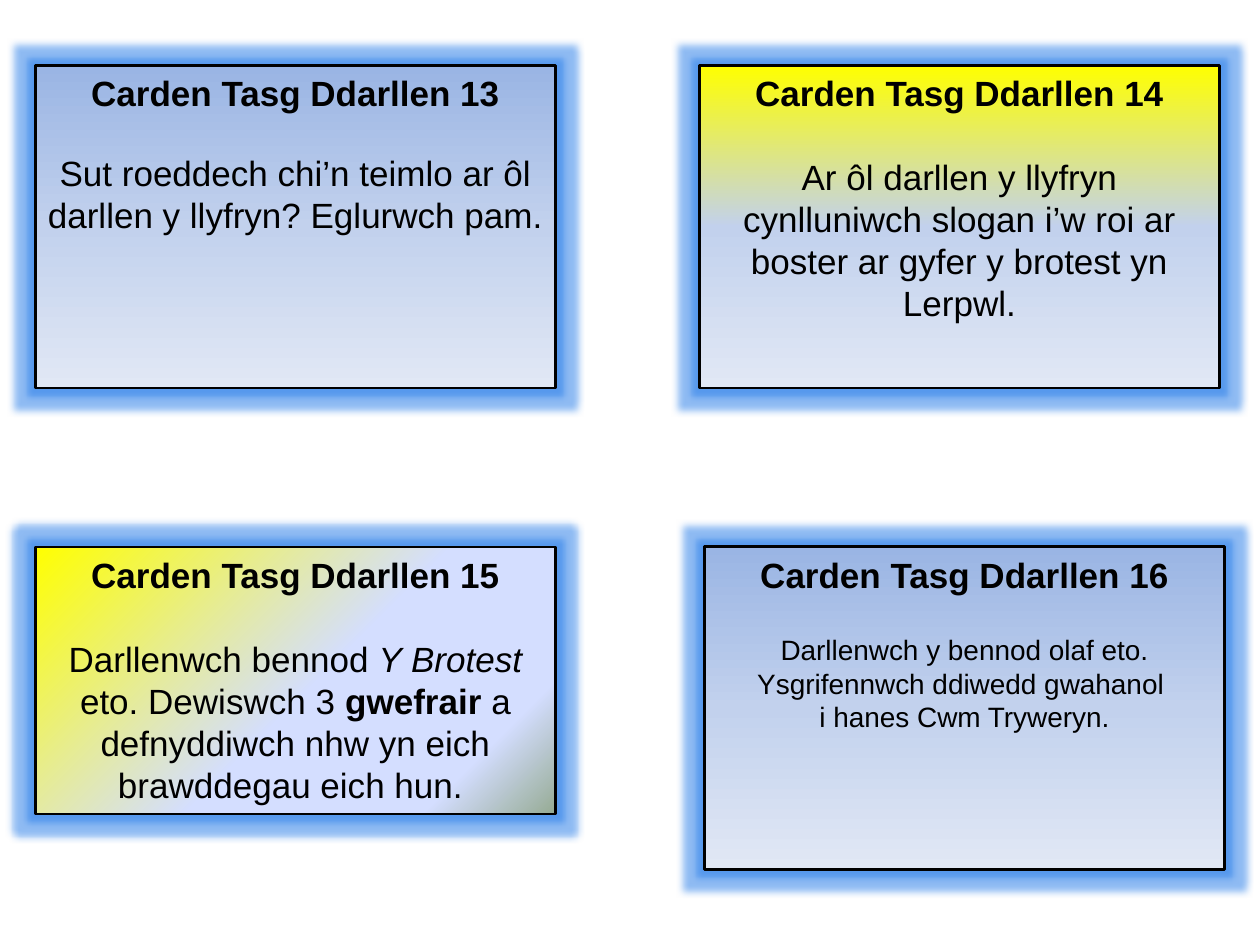
from lxml import etree
from pptx import Presentation
from pptx.dml.color import RGBColor
from pptx.enum.shapes import MSO_SHAPE
from pptx.enum.text import MSO_ANCHOR, MSO_AUTO_SIZE, PP_ALIGN
from pptx.oxml import parse_xml
from pptx.oxml.ns import nsdecls, qn
from pptx.util import Pt

BLACK = RGBColor(0x00, 0x00, 0x00)
YELLOW = RGBColor(0xFF, 0xFF, 0x00)
BLUE = RGBColor(0x9A, 0xB5, 0xE4)
MID_BLUE = RGBColor(0xC2, 0xD1, 0xED)
PALE_BLUE = RGBColor(0xE1, 0xE8, 0xF5)
LAVENDER = RGBColor(0xD4, 0xDE, 0xFF)
SAGE = RGBColor(0x96, 0xAB, 0x94)
GLOW = RGBColor(0x1F, 0x78, 0xE8)

# Gradient stops as (percent, colour)
BLUE_FADE = [(0, BLUE), (50, MID_BLUE), (100, PALE_BLUE)]
YELLOW_FADE = [(0, YELLOW), (50, MID_BLUE), (100, PALE_BLUE)]
DIAGONAL_FADE = [(0, YELLOW), (53, LAVENDER), (83, LAVENDER), (100, SAGE)]

# Card grid, in points
LEFT, RIGHT = 20.16, 399.6
TOP, BOTTOM = 37.44, 312.48
CARD_WIDTH, CARD_HEIGHT = 297.36, 184.32


def add_span(para, text, size=20, bold=False, italic=False, font="Arial"):
    span = para.add_run()
    span.text = text
    span.font.name = font
    span.font.size = Pt(size)
    span.font.bold = bold
    span.font.italic = italic
    span.font.color.rgb = BLACK


class CardSheet:
    def __init__(self, page):
        self.page = page

    def gradient(self, box, stops, angle):
        """Fill the box with any number of stops, at a clockwise angle."""
        box.fill.gradient()
        grad = box._element.spPr.find(qn("a:gradFill"))
        stop_list = grad.find(qn("a:gsLst"))
        for old_stop in list(stop_list):
            stop_list.remove(old_stop)
        for percent, colour in stops:
            stop = etree.SubElement(stop_list, qn("a:gs"), pos=str(percent * 1000))
            etree.SubElement(stop, qn("a:srgbClr"), val=str(colour))
        grad.find(qn("a:lin")).set("ang", str(angle * 60000))

    def glow(self, box, radius=8, opacity=50):
        box._element.spPr.append(parse_xml(
            f'<a:effectLst {nsdecls("a")}><a:glow rad="{Pt(radius)}">'
            f'<a:srgbClr val="{GLOW}"><a:alpha val="{opacity * 1000}"/></a:srgbClr>'
            '</a:glow></a:effectLst>'))

    def card(self, number, left, top, body, stops, height=CARD_HEIGHT,
             angle=90, gap=24, size=20, grow=False):
        """Draw a card; body is a list of paragraphs, each a list of (text, format)."""
        box = self.page.shapes.add_shape(
            MSO_SHAPE.RECTANGLE, Pt(left), Pt(top), Pt(CARD_WIDTH), Pt(height))
        self.gradient(box, stops, angle)
        box.line.color.rgb = BLACK
        box.line.width = Pt(1.5)
        self.glow(box)

        frame = box.text_frame
        frame.word_wrap = True
        frame.vertical_anchor = MSO_ANCHOR.TOP
        if grow:
            frame.auto_size = MSO_AUTO_SIZE.SHAPE_TO_FIT_TEXT
        title = frame.paragraphs[0]
        title.alignment = PP_ALIGN.CENTER
        add_span(title, f"Carden Tasg Ddarllen {number}", bold=True)
        for index, spans in enumerate(body):
            para = frame.add_paragraph()
            para.alignment = PP_ALIGN.CENTER
            if index == 0:
                para.space_before = Pt(gap)
            for text, style in spans:
                add_span(para, text, size=size, **style)


def main():
    deck = Presentation()
    deck.slide_width, deck.slide_height = Pt(720), Pt(540)
    sheet = CardSheet(deck.slides.add_slide(deck.slide_layouts[6]))

    # Left column
    sheet.card(13, LEFT, TOP, [
        [("Sut roeddech chi’n teimlo ar ôl darllen y llyfryn? Eglurwch pam.", {})],
    ], BLUE_FADE, gap=21.6)
    sheet.card(15, LEFT, BOTTOM, [[
        ("Darllenwch bennod ", {}),
        ("Y Brotest ", {"italic": True}),
        ("eto. Dewiswch 3 ", {}),
        ("gwefrair", {"bold": True}),
        (" a defnyddiwch nhw yn eich brawddegau eich hun. ", {}),
    ]], DIAGONAL_FADE, height=152.64, angle=45, grow=True)

    # Right column
    sheet.card(14, RIGHT, TOP, [
        [("Ar ôl darllen y llyfryn cynlluniwch slogan i’w roi ar boster "
          "ar gyfer y brotest yn Lerpwl.", {})],
    ], YELLOW_FADE)
    sheet.card(16, RIGHT + 2.88, BOTTOM, [
        [("Darllenwch y bennod olaf eto.", {})],
        [("Ysgrifennwch ddiwedd gwahanol ", {})],
        [("i hanes Cwm Tryweryn.", {})],
    ], BLUE_FADE, gap=21.6, size=16)

    deck.save("out.pptx")


if __name__ == "__main__":
    main()
